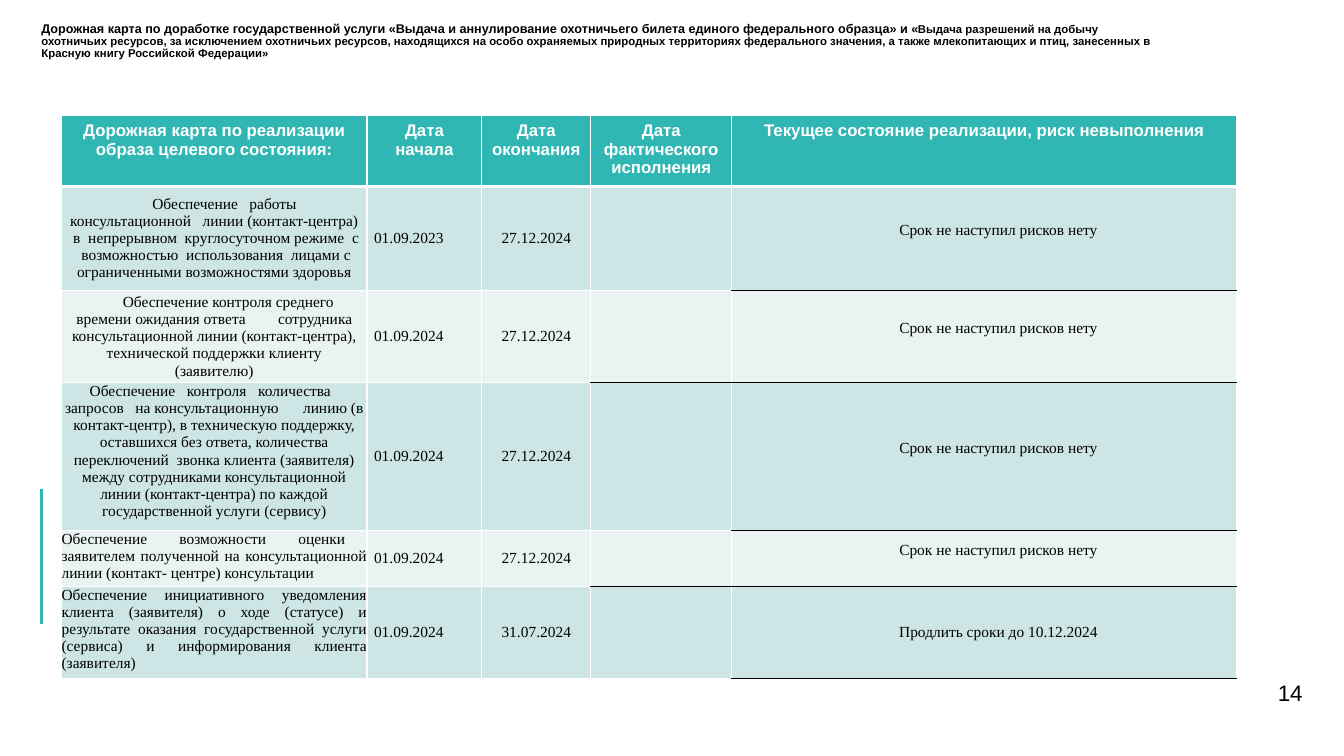
from dataclasses import dataclass

from lxml import etree
from pptx import Presentation
from pptx.dml.color import RGBColor
from pptx.enum.shapes import MSO_CONNECTOR
from pptx.enum.text import MSO_ANCHOR, PP_ALIGN
from pptx.oxml.ns import qn
from pptx.util import Emu, Inches, Pt

LEFT, CENTER, RIGHT, JUSTIFY = PP_ALIGN.LEFT, PP_ALIGN.CENTER, PP_ALIGN.RIGHT, PP_ALIGN.JUSTIFY
TOP, MIDDLE = MSO_ANCHOR.TOP, MSO_ANCHOR.MIDDLE
STRAIGHT = MSO_CONNECTOR.STRAIGHT

TEAL = RGBColor(0x30, 0xB6, 0xB3)
DARK_BAND = RGBColor(0xCD, 0xE5, 0xE5)
LIGHT_BAND = RGBColor(0xE8, 0xF3, 0xF2)
WHITE = RGBColor(0xFF, 0xFF, 0xFF)
BLACK = RGBColor(0, 0, 0)

SANS, SERIF = "Arial", "Times New Roman"
SLIDE_WIDTH, SLIDE_HEIGHT = Inches(13.33), Inches(7.5)
COLUMN_SHARES = (22.73, 8.55, 8.1, 10.5, 37.58)
ROW_SHARES = (8.67, 13.73, 11.33, 18.13, 6.8, 11.33)
FACT_COLUMN, STATUS_COLUMN = 3, 4
FIRST_LINE = Inches(0.28)
SIDE_INSET = Inches(0.07)
LINE_HEIGHT = Inches(0.17)


@dataclass(frozen=True)
class TextStyle:
    font: str = SERIF
    size: float = 11
    color: RGBColor = BLACK
    bold: bool = False
    align: int = CENTER
    anchor: int = MIDDLE
    indent: int = 0
    insets: tuple[int, int, int, int] = (SIDE_INSET, 0, SIDE_INSET, 0)
    tabs: tuple[float, ...] = ()


HEADER = TextStyle(SANS, 12, WHITE, True, anchor=TOP,
                   insets=(Inches(0.1), Inches(0.05), Inches(0.1), Inches(0.05)))
INDENTED = TextStyle(indent=FIRST_LINE)
RAISED = TextStyle(indent=FIRST_LINE, insets=(SIDE_INSET, 0, SIDE_INSET, LINE_HEIGHT))
TABBED = TextStyle(anchor=TOP, insets=(0, 0, 0, 0), tabs=(1.35, 2.36))
JUSTIFIED = TextStyle(align=JUSTIFY, anchor=TOP, insets=(0, 0, 0, 0))
START_DATE = TextStyle(align=LEFT)
END_DATE = TextStyle()


@dataclass(frozen=True)
class Stage:
    task: str
    task_style: TextStyle
    end: str = "27.12.2024"
    start: str = "01.09.2024"
    status: str = "Срок не наступил рисков нету"
    status_style: TextStyle = RAISED


HEADINGS = (
    "Дорожная карта по реализации образа целевого состояния:",
    "Дата начала",
    "Дата окончания",
    "Дата фактического исполнения",
    "Текущее состояние реализации, риск невыполнения",
)
STAGES = (
    Stage("Обеспечение   работы   консультационной   линии (контакт-центра)  в  непрерывном  "
          "круглосуточном режиме  с  возможностью  использования  лицами с ограниченными "
          "возможностями здоровья", INDENTED, start="01.09.2023"),
    Stage("Обеспечение контроля среднего времени ожидания ответа \tсотрудника "
          "консультационной линии (контакт-центра), технической поддержки клиенту "
          "(заявителю)", INDENTED),
    Stage("Обеспечение   контроля   количества   запросов   на консультационную \tлинию "
          "(в контакт-центр), в техническую поддержку, оставшихся без ответа, количества "
          "переключений  звонка клиента (заявителя) между сотрудниками консультационной линии "
          "(контакт-центра) по каждой государственной услуги (сервису)", TABBED),
    Stage("Обеспечение   возможности   оценки   заявителем полученной на консультационной "
          "линии (контакт- центре) консультации", JUSTIFIED),
    Stage("Обеспечение инициативного уведомления клиента (заявителя) о ходе (статусе) и "
          "результате оказания государственной услуги (сервиса) и информирования клиента "
          "(заявителя)", JUSTIFIED, "31.07.2024",
          status="Продлить сроки до 10.12.2024", status_style=INDENTED),
)
TITLE_SPANS = (
    ("Дорожная карта по доработке государственной услуги «Выдача и аннулирование "
     "охотничьего билета единого федерального образца» и «", 9),
    ("Выдача разрешений на добычу охотничьих ресурсов, за исключением охотничьих ресурсов, "
     "находящихся на особо охраняемых природных территориях федерального значения, а также "
     "млекопитающих и птиц, занесенных в Красную книгу Российской Федерации»", 8.1),
)


def across(percent: float) -> Emu:
    return Emu(round(SLIDE_WIDTH * percent / 100))


def down(percent: float) -> Emu:
    return Emu(round(SLIDE_HEIGHT * percent / 100))


def add_box(page, left: float, top: float, width: float, height: float, anchor: int):
    box = page.shapes.add_textbox(across(left), down(top), across(width), down(height))
    frame = box.text_frame
    frame.word_wrap = True
    frame.vertical_anchor = anchor
    frame.margin_left = frame.margin_right = frame.margin_top = frame.margin_bottom = 0
    return frame.paragraphs[0]


def bottom_color(row: int, column: int) -> RGBColor:
    status_edge = column == STATUS_COLUMN and row > 0
    fact_edge = column == FACT_COLUMN and row in (2, 4)
    return BLACK if status_edge or fact_edge else WHITE


def add_border(cell, side: str, color: RGBColor, points: float) -> None:
    properties = cell._tc.get_or_add_tcPr()
    line = etree.SubElement(properties, qn(f"a:{side}"), w=str(Pt(points)))
    fill = etree.SubElement(line, qn("a:solidFill"))
    etree.SubElement(fill, qn("a:srgbClr"), val=str(color))


def paint_cell(cell, row: int, column: int, color: RGBColor) -> None:
    top = bottom_color(row - 1, column) if row else WHITE
    add_border(cell, "lnL", WHITE, 1)
    add_border(cell, "lnR", WHITE, 1)
    add_border(cell, "lnT", top, 3 if row == 1 else 1)
    add_border(cell, "lnB", bottom_color(row, column), 1 if row else 3)
    cell.fill.solid()
    cell.fill.fore_color.rgb = color


def write_cell(cell, text: str, style: TextStyle) -> None:
    cell.margin_left, cell.margin_top, cell.margin_right, cell.margin_bottom = style.insets
    cell.vertical_anchor = style.anchor
    para = cell.text_frame.paragraphs[0]
    para.alignment = style.align
    properties = para._p.get_or_add_pPr()
    if style.indent:
        properties.set("indent", str(style.indent))
    if style.tabs:
        tab_list = etree.SubElement(properties, qn("a:tabLst"))
        for position in style.tabs:
            etree.SubElement(tab_list, qn("a:tab"), pos=str(Inches(position)), algn="l")
    para.add_run().text = text
    style_font(para, style.font, style.color, style.bold)
    para.font.size = Pt(style.size)


def style_font(para, name: str, color: RGBColor, bold: bool) -> None:
    para.font.name = name
    para.font.color.rgb = color
    para.font.bold = bold


def add_title(page) -> None:
    para = add_box(page, 3.08, 2.93, 82.9, 5.2, TOP)
    para.line_spacing = 0.9
    style_font(para, SANS, BLACK, True)
    for text, size in TITLE_SPANS:
        span = para.add_run()
        span.text = text
        span.font.size = Pt(size)


def add_page_number(page) -> None:
    para = add_box(page, 88.97, 88.8, 7.95, 5.73, MIDDLE)
    para.alignment = RIGHT
    para.add_run().text = "14"
    style_font(para, SANS, BLACK, False)
    para.font.size = Pt(16)


def add_accent(page) -> None:
    accent = page.shapes.add_connector(
        STRAIGHT, across(3.08), down(64.67), across(3.08), down(82.53))
    accent.line.color.rgb = TEAL
    accent.line.width = Pt(2.25)
    etree.SubElement(accent._element.spPr, qn("a:effectLst"))


def add_roadmap(page) -> None:
    table = page.shapes.add_table(
        len(ROW_SHARES), len(COLUMN_SHARES), across(4.58), down(15.33),
        across(sum(COLUMN_SHARES)), down(sum(ROW_SHARES))).table
    table.horz_banding = False
    for column, share in zip(table.columns, COLUMN_SHARES):
        column.width = across(share)
    for row, share in zip(table.rows, ROW_SHARES):
        row.height = down(share)
    lines = [[(heading, HEADER) for heading in HEADINGS]]
    for stage in STAGES:
        lines.append([(stage.task, stage.task_style), (stage.start, START_DATE),
                      (stage.end, END_DATE), ("", END_DATE),
                      (stage.status, stage.status_style)])
    for row, line in enumerate(lines):
        color = TEAL if row == 0 else DARK_BAND if row % 2 else LIGHT_BAND
        for column, (text, style) in enumerate(line):
            cell = table.cell(row, column)
            paint_cell(cell, row, column, color)
            if text:
                write_cell(cell, text, style)


def main() -> None:
    deck = Presentation()
    deck.slide_width, deck.slide_height = SLIDE_WIDTH, SLIDE_HEIGHT
    page = deck.slides.add_slide(deck.slide_layouts[6])
    add_title(page)
    add_page_number(page)
    add_accent(page)
    add_roadmap(page)
    deck.save("out.pptx")


if __name__ == "__main__":
    main()
